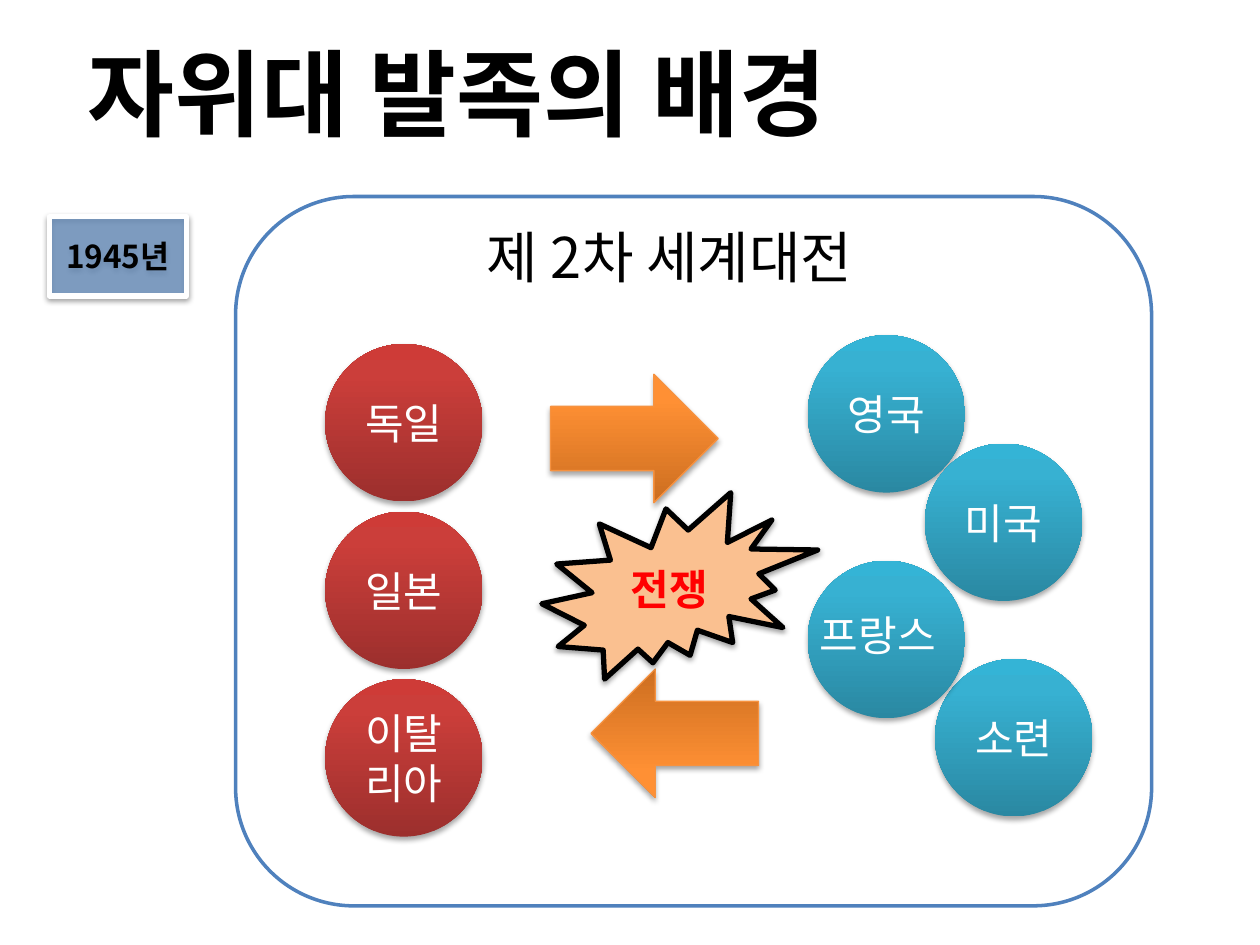
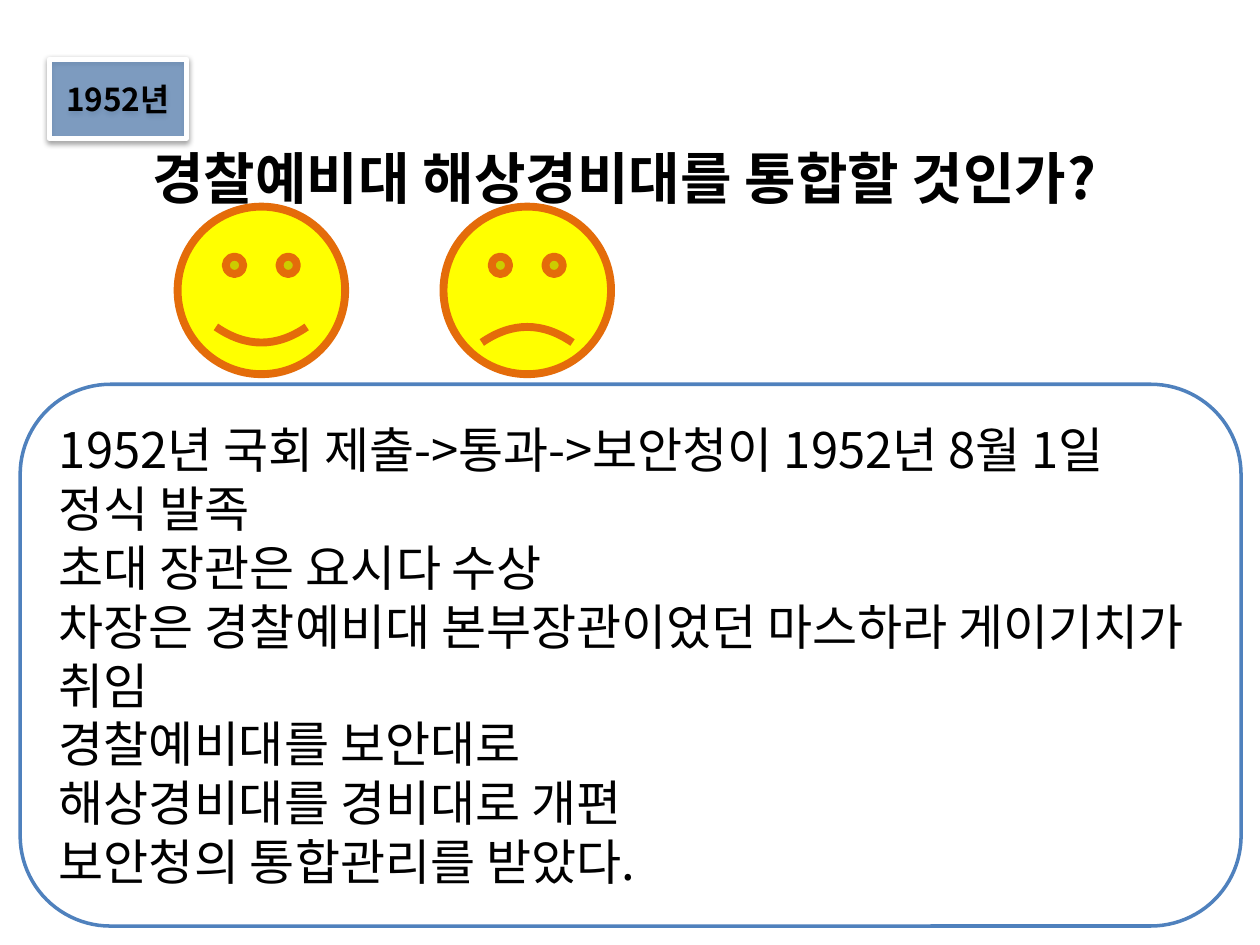
from lxml import etree
from pptx import Presentation
from pptx.dml.color import RGBColor
from pptx.enum import shapes, text
from pptx.oxml import parse_xml
from pptx.oxml.ns import qn
from pptx.util import Inches, Pt

FONT = "Noto Sans CJK KR"
NAMESPACE = 'xmlns:a="http://schemas.openxmlformats.org/drawingml/2006/main"'
COLORS = {
    "black": "000000", "white": "FFFFFF", "blue": "4F81BD", "red": "FF0000",
    "peach": "FAC090", "yellow": "FFFF00", "face line": "E46C0A", "arrow line": "F69240",
}
GRADIENTS = {
    "axis": ("9C2F2D", "CB3E3A", "CE3B37"),
    "allies": ("2A88A2", "37B1D2", "34B4D6"),
    "arrow": ("CC6E20", "FF9034", "FF9136"),
}
GRADIENT_POSITIONS = (0, 80, 100)
STRONG_SHADOW = (38, 1.57)
SOFT_SHADOW = (35, 1.81)
SHAPE = shapes.MSO_SHAPE
CENTER = text.PP_ALIGN.CENTER


def write_text(shape, content, size=24, color="white", bold=False, align=CENTER,
               anchor=text.MSO_ANCHOR.MIDDLE, wrap=True, outline=False):
    frame = shape.text_frame
    frame.word_wrap = wrap
    frame.vertical_anchor = anchor
    frame.text = content
    for paragraph in frame.paragraphs:
        paragraph.alignment = align
        for run in paragraph.runs:
            run.font.size = Pt(size)
            run.font.bold = bold
            run.font.color.rgb = RGBColor.from_string(COLORS[color])
            run.font.name = FONT
            properties = run.font._element
            etree.SubElement(properties, qn("a:ea"), typeface=FONT)
            if outline:
                properties.insert(0, parse_xml(
                    f'<a:ln {NAMESPACE} w="18000"><a:solidFill>'
                    f'<a:srgbClr val="{COLORS["white"]}"/></a:solidFill></a:ln>'))


def draw_shape(slide, kind, box, fill, line=None, width=0.75, opacity=100, shadow=None):
    shape = slide.shapes.add_shape(kind, *map(Inches, box))
    shape.shadow.inherit = False
    properties = shape._element.spPr
    if fill in GRADIENTS:
        stops = "".join(
            f'<a:gs pos="{position * 1000}"><a:srgbClr val="{color}"/></a:gs>'
            for position, color in zip(GRADIENT_POSITIONS, GRADIENTS[fill]))
        properties.find(qn("a:prstGeom")).addnext(parse_xml(
            f'<a:gradFill {NAMESPACE} rotWithShape="1"><a:gsLst>{stops}</a:gsLst>'
            '<a:lin ang="16200000" scaled="0"/></a:gradFill>'))
    else:
        shape.fill.solid()
        shape.fill.fore_color.rgb = RGBColor.from_string(COLORS[fill])
        if opacity < 100:
            color = properties.find(f'{qn("a:solidFill")}/{qn("a:srgbClr")}')
            etree.SubElement(color, qn("a:alpha"), val=str(opacity * 1000))
    if line:
        shape.line.color.rgb = RGBColor.from_string(COLORS[line])
        shape.line.width = Pt(width)
    else:
        shape.line.fill.background()
    if shadow:
        strength, distance = shadow
        properties.find(qn("a:effectLst")).append(parse_xml(
            f'<a:outerShdw {NAMESPACE} blurRad="{Pt(3.15)}" dist="{Pt(distance)}" '
            f'dir="5400000" rotWithShape="0"><a:srgbClr val="{COLORS["black"]}">'
            f'<a:alpha val="{strength * 1000}"/></a:srgbClr></a:outerShdw>'))
    return shape


presentation = Presentation()
presentation.slide_width = Inches(10)
presentation.slide_height = Inches(7.5)

pages = [
    ("1945년", 1.72, "자위대 발족의 배경", (0.23, 0.23, 6.79, 1.01), 54, False,
     (1.87, 1.56, 7.27, 5.63)),
    ("1952년", 0.47, "경찰예비대 해상경비대를 통합할 것인가?", (0.62, 1.09, 8.67, 0.64), 32, True,
     (0.16, 3.05, 9.69, 4.3)),
]
slides, panels = [], []
for year, year_top, title, title_box, title_size, title_wrap, panel_box in pages:
    slide = presentation.slides.add_slide(presentation.slide_layouts[6])
    year_tag = draw_shape(slide, SHAPE.RECTANGLE, (0.39, year_top, 1.09, 0.63), "blue",
                          "white", 3, opacity=60, shadow=STRONG_SHADOW)
    write_text(year_tag, year, size=18, color="black", bold=True)
    title_shape = slide.shapes.add_textbox(*map(Inches, title_box))
    write_text(title_shape, title, size=title_size, color="black", bold=True,
               anchor=text.MSO_ANCHOR.TOP, wrap=title_wrap, outline=True)
    panels.append(draw_shape(slide, SHAPE.ROUNDED_RECTANGLE, panel_box, "white",
                             "blue", 2, opacity=70))
    slides.append(slide)

war_slide, agency_slide = slides

heading = war_slide.shapes.add_textbox(*map(Inches, (3.05, 1.72, 4.53, 0.64)))
write_text(heading, "제 2차 세계대전", size=32, color="black", anchor=text.MSO_ANCHOR.TOP)

for left, top, rotation in [(4.37, 2.97, 0), (4.69, 5.31, 180)]:
    arrow = draw_shape(war_slide, SHAPE.RIGHT_ARROW, (left, top, 1.33, 1.02), "arrow",
                       "arrow line", shadow=SOFT_SHADOW)
    arrow.rotation = rotation

countries = [(name, "axis", 2.58, 2.73 + 1.33 * row)
             for row, name in enumerate(["독일", "일본", "이탈리아"])]
countries += [
    ("영국", "allies", 6.41, 2.66),
    ("미국", "allies", 7.34, 3.52),
    ("소련", "allies", 7.42, 5.23),
    ("", "allies", 6.41, 4.45),
]
for name, side, left, top in countries:
    circle = draw_shape(war_slide, SHAPE.OVAL, (left, top, 1.25, 1.25), side,
                        shadow=SOFT_SHADOW)
    if name:
        write_text(circle, name)

france = war_slide.shapes.add_textbox(*map(Inches, (6.41, 4.79, 1.33, 0.5)))
write_text(france, "프랑스", align=text.PP_ALIGN.LEFT, anchor=text.MSO_ANCHOR.TOP)

war_burst = draw_shape(war_slide, SHAPE.EXPLOSION2, (4.3, 3.91, 2.19, 1.48), "peach",
                       "black", 3, shadow=STRONG_SHADOW)
write_text(war_burst, "전쟁", color="red", bold=True)

for left, smile in [(1.41, 0.047), (3.52, -0.047)]:
    face = draw_shape(agency_slide, SHAPE.SMILEY_FACE, (left, 1.64, 1.33, 1.33), "yellow",
                      "face line", 4.5)
    face.adjustments[0] = smile

history = [
    "1952년 국회 제출->통과->보안청이 1952년 8월 1일 정식 발족",
    "초대 장관은 요시다 수상",
    "차장은 경찰예비대 본부장관이었던 마스하라 게이기치가 취임",
    "경찰예비대를 보안대로",
    "해상경비대를 경비대로 개편",
    "보안청의 통합관리를 받았다.",
]
write_text(panels[1], "\n".join(history), size=28, color="black", align=text.PP_ALIGN.LEFT)

presentation.save("out.pptx")
